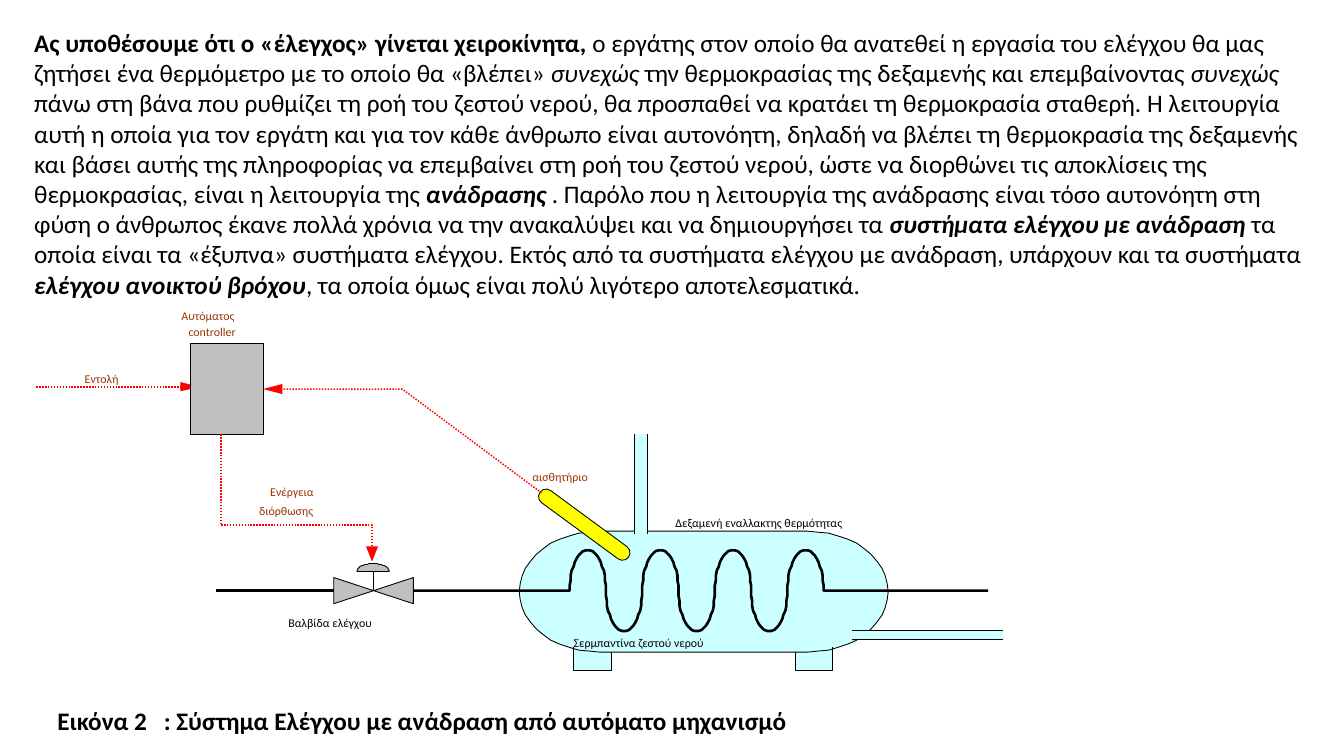
"""Build the slide on feedback control of a heat exchanger tank."""
from math import cos, radians, sin

from lxml.etree import SubElement
from pptx import Presentation
from pptx.dml.color import RGBColor
from pptx.enum.dml import MSO_LINE
from pptx.enum.shapes import MSO_CONNECTOR, MSO_SHAPE
from pptx.enum.text import MSO_AUTO_SIZE
from pptx.oxml.ns import qn
from pptx.util import Pt

PX = 9144
BLACK, RED, BROWN = "000000", "FF0000", "993300"
AQUA, GRAY, YELLOW = "CCFFFF", "C0C0C0", "FFFF00"
THIN, DOTS, THICK = 0.62, 1.04, 1.87

STORY = [
    ("Ας υποθέσουμε ότι ο «έλεγχος» γίνεται χειροκίνητα, ", "b"),
    ("ο εργάτης στον οποίο θα ανατεθεί η εργασία του ελέγχου θα μας ζητήσει "
     "ένα θερμόμετρο με το οποίο θα «βλέπει» ", ""),
    ("συνεχώς", "i"),
    (" την θερμοκρασίας της δεξαμενής και επεμβαίνοντας ", ""),
    ("συνεχώς ", "i"),
    ("πάνω στη βάνα που ρυθμίζει τη ροή του ζεστού νερού, θα προσπαθεί να "
     "κρατάει τη θερμοκρασία σταθερή. Η λειτουργία αυτή η οποία για τον εργάτη "
     "και για τον κάθε άνθρωπο είναι αυτονόητη, δηλαδή να βλέπει τη θερμοκρασία "
     "της δεξαμενής και βάσει αυτής της πληροφορίας να επεμβαίνει στη ροή του "
     "ζεστού νερού, ώστε να διορθώνει τις αποκλίσεις της θερμοκρασίας, είναι η "
     "λειτουργία της ", ""),
    ("ανάδρασης", "bi"),
    (" . Παρόλο που η λειτουργία της ανάδρασης είναι τόσο αυτονόητη στη φύση ο "
     "άνθρωπος έκανε πολλά χρόνια να την ανακαλύψει και να δημιουργήσει τα ", ""),
    ("συστήματα ελέγχου με ανάδραση ", "bi"),
    ("τα οποία είναι τα «έξυπνα» συστήματα ελέγχου. Εκτός από τα συστήματα "
     "ελέγχου με ανάδραση, υπάρχουν και τα συστήματα ", ""),
    ("ελέγχου ανοικτού βρόχου", "bi"),
    (", τα οποία όμως είναι πολύ λιγότερο αποτελεσματικά.", ""),
]
CAPTION = [("Εικόνα 2 \t : Σύστημα Ελέγχου με ανάδραση από αυτόματο μηχανισμό", "b")]
LABELS = [
    ("Δεξαμενή εναλλακτης θερμότητας", 670, 511, 420, BLACK),
    ("Σερμπαντίνα ζεστού νερού", 569, 630, 334, BLACK),
    ("Βαλβίδα ελέγχου", 286, 610, 211, BLACK),
    ("αισθητήριο", 528, 465, 136, BROWN),
    ("Εντολή", 84, 368, 89, BROWN),
    ("Ενέργεια", 268, 480, 111, BROWN),
    ("διόρθωσης", 257, 499, 138, BROWN),
    ("Αυτόματος", 180, 305, 134, BROWN),
    ("controller", 187, 321, 116, BROWN),
]


def rgb(code):
    return RGBColor.from_string(code)


def paint(shape, fill=None, line=None, width=THIN):
    shape.shadow.inherit = False
    if fill:
        shape.fill.solid()
        shape.fill.fore_color.rgb = rgb(fill)
    else:
        shape.fill.background()
    if line:
        shape.line.color.rgb = rgb(line)
        shape.line.width = Pt(width)
    else:
        shape.line.fill.background()
    return shape


def block(shapes, kind, left, top, width, height, fill, line=None):
    box = [n * PX for n in (left, top, width, height)]
    return paint(shapes.add_shape(kind, *box), fill, line)


def outline(shapes, points, fill=None, line=None, width=THIN, close=True):
    pen = shapes.build_freeform(*points[0], scale=PX)
    pen.add_line_segments(points[1:], close=close)
    return paint(pen.convert_to_shape(), fill, line, width)


def arc(mid_x, mid_y, wide, high, start, end):
    turns = [radians(start + (end - start) * n / 24) for n in range(25)]
    return [(mid_x + wide * cos(t), mid_y + high * sin(t)) for t in turns]


def rule(shapes, x1, y1, x2, y2, width=THIN):
    ends = [n * PX for n in (x1, y1, x2, y2)]
    link = shapes.add_connector(MSO_CONNECTOR.STRAIGHT, *ends)
    link.line.color.rgb = rgb(BLACK)
    link.line.width = Pt(width)
    SubElement(link._element.spPr, qn("a:effectLst"))


def signal(shapes, points, head):
    path = outline(shapes, points, None, RED, DOTS, close=False)
    path.line.dash_style = MSO_LINE.ROUND_DOT
    outline(shapes, head, RED)


def prose(shapes, left, top, width, height, parts, size=18, color=BLACK):
    box = shapes.add_textbox(*[n * PX for n in (left, top, width, height)])
    frame = box.text_frame
    frame.word_wrap = True
    para = frame.paragraphs[0]
    para.font.name, para.font.size = "Calibri", Pt(size)
    para.font.color.rgb = rgb(color)
    for text, style in parts:
        run = para.add_run()
        run.text = text
        run.font.bold, run.font.italic = "b" in style, "i" in style
    return frame


def label(shapes, text, left, top, width, color):
    frame = prose(shapes, left, top, width, 20, [(text, "")], 8.5, color)
    frame.margin_left = frame.margin_right = 0
    frame.margin_top = frame.margin_bottom = 0
    frame.paragraphs[0].line_spacing = 1.07


def tank(shapes):
    for left in (569, 789):
        block(shapes, MSO_SHAPE.RECTANGLE, left, 644, 37, 21, AQUA)
    shell = arc(595, 587, 80, 60, 90, 270) + arc(801, 587, 80, 60, -90, 90)
    outline(shapes, shell, AQUA, BLACK)
    for outer, inner in ((569, 606), (826, 789)):
        foot = [(outer, 642), (outer, 665), (inner, 665), (inner, 647)]
        outline(shapes, foot, None, BLACK, close=False)


def coil(shapes):
    bends = [(410, 586)]
    for n in range(7):
        end = 0 if n % 2 else 360
        bends += arc(583 + 36 * n, 586, 18, 40, 180, end)
    outline(shapes, bends + [(980, 586)], None, BLACK, THICK, close=False)


def valve(shapes):
    wings = [(331, 599), (331, 573), (410, 599), (410, 573)]
    outline(shapes, wings, GRAY, BLACK)
    rule(shapes, 370, 586, 370, 567)
    outline(shapes, arc(370, 567, 16, 8, 180, 360), GRAY, BLACK)
    rule(shapes, 331, 586, 214, 586, THICK)


def pipes(shapes):
    block(shapes, MSO_SHAPE.RECTANGLE, 629, 431, 13, 99, AQUA)
    for x in (629, 642):
        rule(shapes, x, 431, x, 530)
    block(shapes, MSO_SHAPE.RECTANGLE, 845, 625, 150, 9, AQUA)
    for y in (625, 634):
        rule(shapes, 845, y, 995, y)


def control(shapes):
    signal(shapes, [(36, 384), (180, 384)], [(179, 379), (198, 384), (179, 388)])
    probe = block(shapes, MSO_SHAPE.ROUNDED_RECTANGLE, 525, 513, 109, 15, YELLOW, BLACK)
    probe.adjustments[0] = 0.5
    probe.rotation = 36.3
    block(shapes, MSO_SHAPE.RECTANGLE, 189, 341, 72, 90, GRAY, BLACK)
    signal(shapes, [(219, 431), (219, 521), (369, 521), (369, 543)],
           [(363, 542), (375, 542), (369, 557)])
    signal(shapes, [(537, 489), (399, 386), (279, 386)],
           [(280, 381), (280, 391), (261, 386)])


def main():
    deck = Presentation()
    deck.slide_width, deck.slide_height = 1333 * PX, 750 * PX
    shapes = deck.slides.add_slide(deck.slide_layouts[6]).shapes
    story = prose(shapes, 24, 22, 1289, 283, STORY)
    story.auto_size = MSO_AUTO_SIZE.SHAPE_TO_FIT_TEXT
    scheme = shapes.add_group_shape().shapes
    for draw in (tank, valve, coil, pipes, control):
        draw(scheme)
    for entry in LABELS:
        label(scheme, *entry)
    caption = prose(shapes, 47, 695, 1266, 40, CAPTION)
    caption.auto_size = MSO_AUTO_SIZE.SHAPE_TO_FIT_TEXT
    deck.save("out.pptx")


if __name__ == "__main__":
    main()
